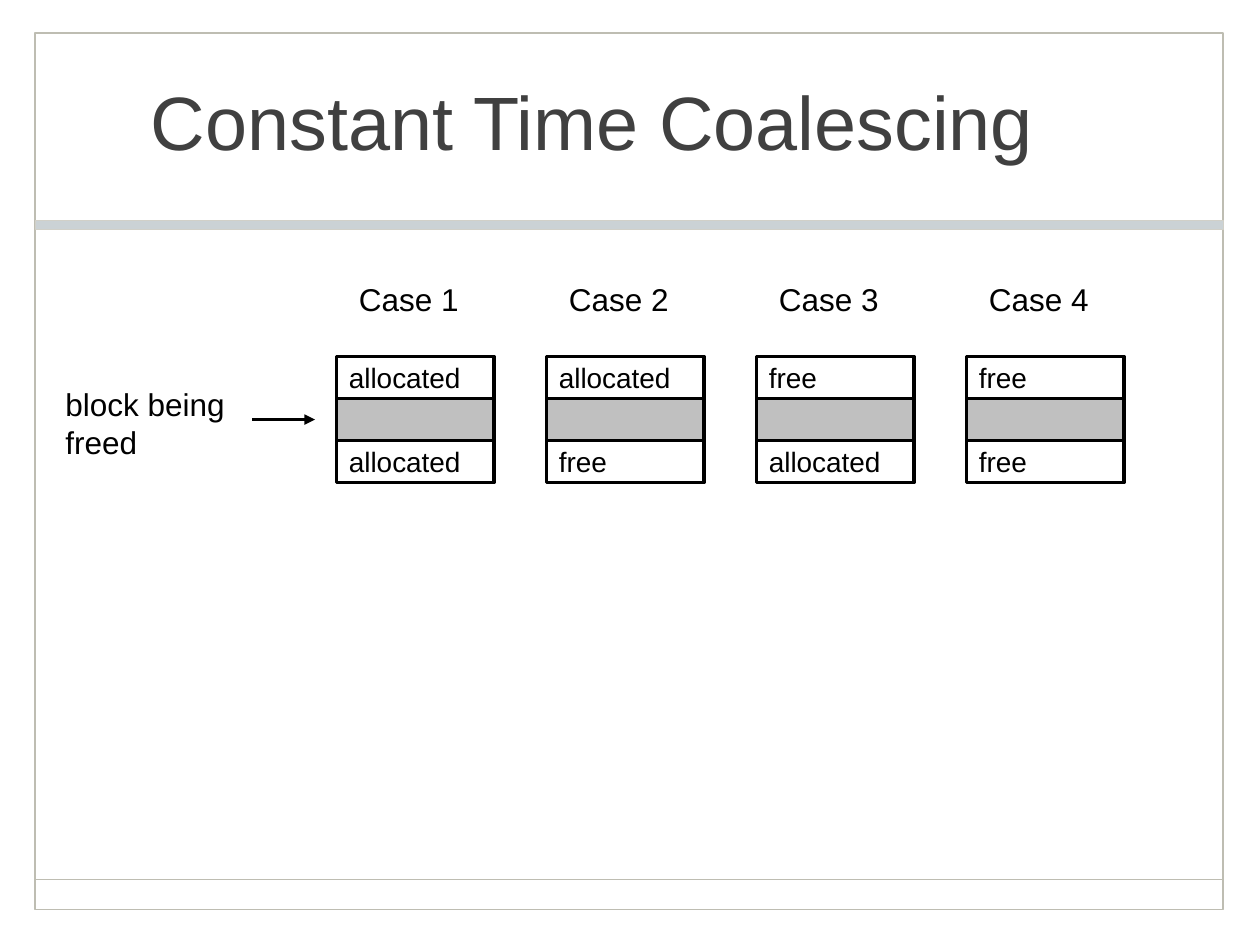
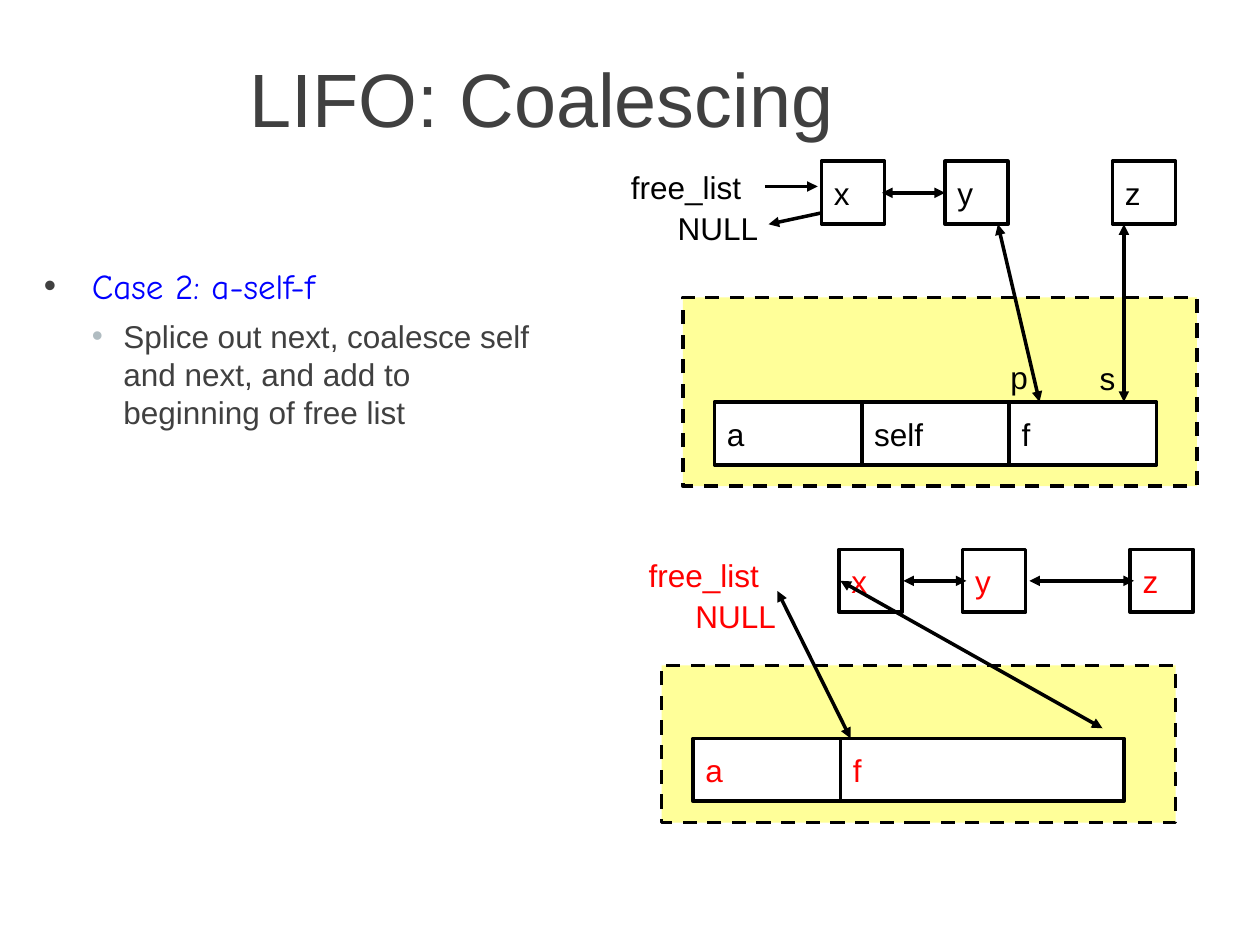
from dataclasses import dataclass
from lxml.etree import SubElement
from pptx import Presentation
from pptx.dml.color import RGBColor
from pptx.enum.dml import MSO_LINE
from pptx.enum.shapes import MSO_CONNECTOR, MSO_SHAPE
from pptx.enum.text import MSO_ANCHOR, PP_ALIGN
from pptx.oxml.ns import qn
from pptx.util import Inches, Pt


@dataclass(frozen=True)
class Theme:
    font: str = "Arial"
    hand: str = "Comic Neue"
    black: str = "000000"
    white: str = "FFFFFF"
    gray: str = "404040"
    block: str = "C0C0C0"
    heap: str = "FFFF99"
    red: str = "FF0000"
    blue: str = "0000FF"
    dot: str = "B0BCC1"
    frame: str = "BEBDB2"
    band: str = "CBD2D5"
    edge: str = "D1D0C8"
    title: float = 43.2
    lead: int = 20
    text: int = 18
    small: int = 16
    line: int = 2


class Deck:
    def __init__(self, theme):
        self.theme = theme
        self.file = Presentation()
        self.file.slide_width, self.file.slide_height = Inches(10), Inches(7.5)

    def start(self):
        self.slide = self.file.slides.add_slide(self.file.slide_layouts[6])

    def style(self, para, size=None, color=None, font=None):
        para.font.size = Pt(size or self.theme.text)
        para.font.name = font or self.theme.font
        para.font.color.rgb = RGBColor.from_string(color or self.theme.black)

    def pen(self, line, color=None, width=None):
        line.color.rgb = RGBColor.from_string(color or self.theme.black)
        line.width = Pt(width or self.theme.line)

    def label(self, text, x, y, w, h=0.4, color=None, size=None, align=PP_ALIGN.LEFT):
        box = self.slide.shapes.add_textbox(*map(Inches, (x, y, w, h)))
        frame = box.text_frame
        frame.word_wrap = True
        frame.vertical_anchor = MSO_ANCHOR.MIDDLE
        frame.text = text
        for para in frame.paragraphs:
            para.alignment = align
            self.style(para, size, color)

    def title(self, text, x, y, w):
        self.label(text, x, y, w, 0.63, self.theme.gray, self.theme.title, PP_ALIGN.CENTER)

    def rect(self, x, y, w, h, fill=None, line=None, width=None, dash=False):
        box = self.slide.shapes.add_shape(MSO_SHAPE.RECTANGLE, *map(Inches, (x, y, w, h)))
        box.shadow.inherit = False
        if fill:
            box.fill.solid()
            box.fill.fore_color.rgb = RGBColor.from_string(fill)
        else:
            box.fill.background()
        self.pen(box.line, line, width)
        if dash:
            box.line.dash_style = MSO_LINE.DASH
        return box

    def cell(self, text, x, y, w, h=0.5, color=None, size=None):
        frame = self.rect(x, y, w, h, self.theme.white).text_frame
        frame.word_wrap = True
        frame.vertical_anchor = MSO_ANCHOR.MIDDLE
        frame.text = text
        frame.paragraphs[0].alignment = PP_ALIGN.LEFT
        self.style(frame.paragraphs[0], size, color)

    def line(self, x1, y1, x2, y2, ends=(), color=None, width=None):
        link = self.slide.shapes.add_connector(
            MSO_CONNECTOR.STRAIGHT, *map(Inches, (x1, y1, x2, y2)))
        self.pen(link.line, color, width)
        for end in ends:
            SubElement(link.line._ln, qn(f"a:{end}End"), type="triangle")
        SubElement(link._element.spPr, qn("a:effectLst"))

    def arrow(self, *ends):
        self.line(*ends, ends=("tail",))

    def link(self, *ends):
        self.line(*ends, ends=("head", "tail"))

    def border(self):
        t = self.theme
        self.rect(0.28, 0.26, 9.43, 6.96, line=t.frame, width=1)
        self.line(0.28, 6.98, 9.71, 6.98, color=t.frame, width=1)
        self.rect(0.28, 1.75, 9.43, 0.07, t.band, t.edge, 0.25)

    def points(self, items, x, y, w, h):
        frame = self.slide.shapes.add_textbox(*map(Inches, (x, y, w, h))).text_frame
        frame.word_wrap = True
        for i, (text, left, hang, gap, dot, *look) in enumerate(items):
            para = frame.add_paragraph() if i else frame.paragraphs[0]
            para.text = text
            para.space_before = Pt(gap)
            props = para._p.get_or_add_pPr()
            props.set("marL", str(Inches(left)))
            props.set("indent", str(-Inches(hang)))
            SubElement(SubElement(props, qn("a:buClr")), qn("a:srgbClr"), val=dot)
            SubElement(props, qn("a:buFont"), typeface=self.theme.font)
            SubElement(props, qn("a:buChar"), char="•")
            self.style(para, *look)

    def queue(self, x, y, color):
        self.label("free_list", x, y, 1.17, color=color)
        self.label("NULL", x + 0.37, y + 0.33, 0.88, color=color)
        for name, step in (("x", 1.61), ("y", 2.59), ("z", 3.92)):
            self.cell(name, x + step, y, 0.5, color=color)

    def heap(self, x, y, h, cells, color):
        self.rect(x, y, 4.08, h, self.theme.heap, dash=True)
        left = x + 0.25
        for name, w in cells:
            self.cell(name, left, y + h - 0.67, w, color=color)
            left += w


def cases(deck):
    t = deck.theme
    deck.start()
    deck.border()
    deck.title("Constant Time Coalescing", 0.86, 0.64, 7.68)
    pairs = (("allocated", "allocated"), ("allocated", "free"),
             ("free", "allocated"), ("free", "free"))
    high = 1 / 3
    for i, (above, below) in enumerate(pairs):
        x = 2.67 + i * 5 / 3
        deck.label(f"Case {i + 1}", x + 0.08, 2.17, 1.01)
        deck.rect(x, 2.83 + high, 1.25, high, t.block)
        deck.cell(above, x, 2.83, 1.25, high, size=t.small)
        deck.cell(below, x, 2.83 + 2 * high, 1.25, high, size=t.small)
    deck.label("block being\nfreed", 0.42, 3.01, 1.59, 0.7)
    deck.arrow(2, 3.33, 2.5, 3.33)


def lifo(deck):
    t = deck.theme
    deck.start()
    deck.title("LIFO: Coalescing", 0.42, 0.46, 7.76)
    deck.points((
        ("Case 2: a-self-f", 0.38, 0.38, 0, t.gray, t.lead, t.blue, t.hand),
        ("Splice out next, coalesce self and next, and add to beginning of free list",
         0.63, 0.25, 6, t.dot, t.text, t.gray),
    ), 0.25, 2.05, 4.21, 4.05)

    deck.heap(5.42, 2.36, 1.5, (("a", 1.17), ("self", 1.17), ("f", 1.17)), t.black)
    deck.label("p", 7.92, 2.79, 0.35)
    deck.label("s", 8.63, 2.8, 0.34)
    deck.queue(4.91, 1.28, t.black)
    deck.arrow(6.07, 1.48, 6.49, 1.48)
    deck.arrow(6.52, 1.69, 6.1, 1.78)

    deck.heap(5.25, 5.28, 1.25, (("a", 1.17), ("f", 2.25)), t.red)
    deck.queue(5.05, 4.36, t.red)

    for ends in ((7.92, 1.78, 8.25, 3.19), (8.92, 1.78, 8.92, 3.19),
                 (7, 1.53, 7.5, 1.53), (8.17, 4.61, 9, 4.61),
                 (6.17, 4.69, 6.75, 5.86), (7.17, 4.61, 7.67, 4.61),
                 (6.67, 4.61, 8.75, 5.78)):
        deck.link(*ends)


def main():
    deck = Deck(Theme())
    cases(deck)
    lifo(deck)
    deck.file.save("out.pptx")


if __name__ == "__main__":
    main()
